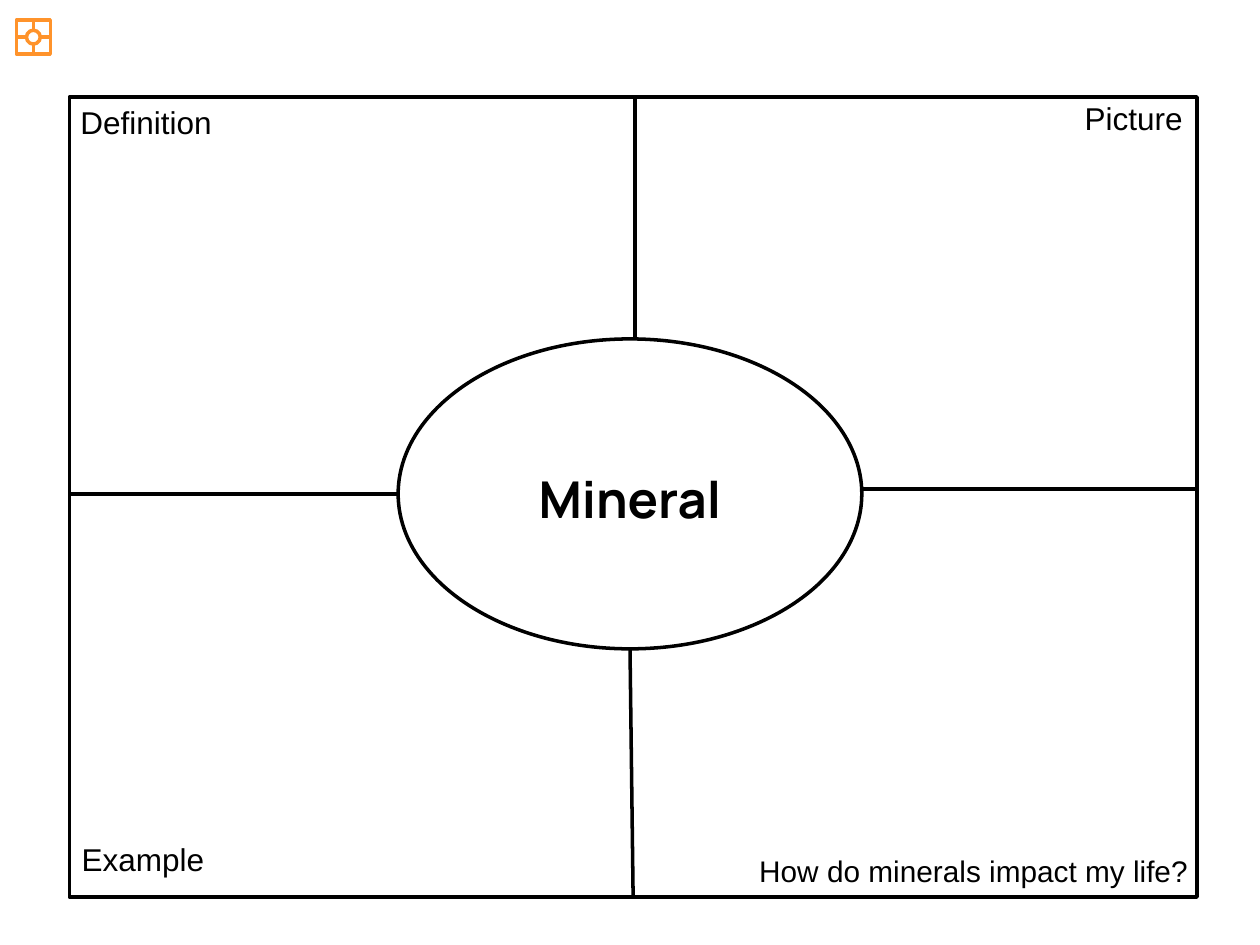
from dataclasses import dataclass

from pptx import Presentation
from pptx.dml.color import RGBColor
from pptx.enum.shapes import MSO_CONNECTOR, MSO_SHAPE
from pptx.enum.text import MSO_AUTO_SIZE, PP_ALIGN
from pptx.oxml.ns import qn
from pptx.util import Inches, Pt


@dataclass(frozen=True)
class Theme:
    ink: str = "000000"
    accent: str = "FF932B"
    paper: str = "FFFFFF"
    line: float = 2
    title: float = 29
    label: float = 18
    question: float = 17
    title_font: str = "Manrope"
    label_font: str = "Arial"


@dataclass(frozen=True)
class Box:
    x: float
    y: float
    w: float
    h: float

    def emu(self):
        return [Inches(v) for v in (self.x, self.y, self.w, self.h)]


@dataclass(frozen=True)
class Label:
    text: str
    box: Box
    size: float
    align: PP_ALIGN = PP_ALIGN.LEFT


T = Theme()
TOP, LEFT, BOTTOM, RIGHT = range(4)


def add_outline(s, kind: MSO_SHAPE, box: Box, color: str, fill: str | None = None):
    sp = s.shapes.add_shape(kind, *box.emu())
    sp.shadow.inherit = False
    if fill:
        sp.fill.solid()
        sp.fill.fore_color.rgb = RGBColor.from_string(fill)
    else:
        sp.fill.background()
    sp.line.color.rgb = RGBColor.from_string(color)
    sp.line.width = Pt(T.line)
    return sp


def add_line(s, x1: float, y1: float, x2: float, y2: float, color: str):
    ln = s.shapes.add_connector(MSO_CONNECTOR.STRAIGHT, *map(Inches, (x1, y1, x2, y2)))
    ln.line.color.rgb = RGBColor.from_string(color)
    ln.line.width = Pt(T.line)
    sp_pr = ln._element.spPr
    sp_pr.append(sp_pr.makeelement(qn("a:effectLst"), {}))
    return ln


def add_text(s, text: str, box: Box, *, size: float, font: str = T.label_font,
             bold: bool = False, align: PP_ALIGN = PP_ALIGN.LEFT, color: str = T.ink):
    tf = s.shapes.add_textbox(*box.emu()).text_frame
    tf.word_wrap = True
    tf.auto_size = MSO_AUTO_SIZE.SHAPE_TO_FIT_TEXT
    p = tf.paragraphs[0]
    p.alignment = align
    r = p.add_run()
    r.text = text
    r.font.name, r.font.size, r.font.bold = font, Pt(size), bold
    r.font.color.rgb = RGBColor.from_string(color)


def add_icon(s, box: Box, hub: Box):
    square = add_outline(s, MSO_SHAPE.RECTANGLE, box, T.accent)
    cx, cy = box.x + box.w / 2, box.y + box.h / 2
    spokes = {
        TOP: (cx, box.y, cx, hub.y),
        BOTTOM: (cx, box.y + box.h, cx, hub.y + hub.h),
        LEFT: (box.x, cy, hub.x, cy),
        RIGHT: (box.x + box.w, cy, hub.x + hub.w, cy),
    }
    for side, ends in spokes.items():
        add_line(s, *ends, T.accent).begin_connect(square, side)
    add_outline(s, MSO_SHAPE.OVAL, hub, T.accent, T.paper)


FRAME = Box(0.55, 0.77, 8.95, 6.35)
CENTER = Box(3.16, 2.69, 3.68, 2.46)
DIVIDERS = [
    (5.04, FRAME.y, 5.04, CENTER.y),
    (FRAME.x, 3.92, CENTER.x, 3.92),
    (CENTER.x + CENTER.w, 3.88, FRAME.x + FRAME.w, 3.88),
]
LABELS = [
    Label("Definition", Box(0.54, 0.77, 1.25, 0.4), T.label),
    Label("Example", Box(0.55, 6.62, 1.18, 0.4), T.label),
    Label("Picture", Box(8.51, 0.74, 0.99, 0.4), T.label),
    Label("How do minerals impact my life?", Box(4.6, 6.72, 4.93, 0.39),
          T.question, PP_ALIGN.RIGHT),
]


def main():
    prs = Presentation()
    prs.slide_width, prs.slide_height = Inches(10), Inches(7.5)
    s = prs.slides.add_slide(prs.slide_layouts[6])

    # Frame and dividers
    frame = add_outline(s, MSO_SHAPE.RECTANGLE, FRAME, T.ink)
    for ends in DIVIDERS:
        add_line(s, *ends, T.ink)
    lower = add_line(s, 5, CENTER.y + CENTER.h, 5.02, FRAME.y + FRAME.h, T.ink)
    lower.end_connect(frame, BOTTOM)

    # Central term
    add_outline(s, MSO_SHAPE.OVAL, CENTER, T.ink, T.paper)
    add_text(s, "Mineral", Box(3.27, 3.66, 3.46, 0.59), size=T.title,
             font=T.title_font, bold=True, align=PP_ALIGN.CENTER)

    # Quadrant labels
    for label in LABELS:
        add_text(s, label.text, label.box, size=label.size, align=label.align)

    # Corner icon
    add_icon(s, Box(0.13, 0.16, 0.27, 0.27), Box(0.21, 0.24, 0.11, 0.11))

    prs.save("out.pptx")


if __name__ == "__main__":
    main()
